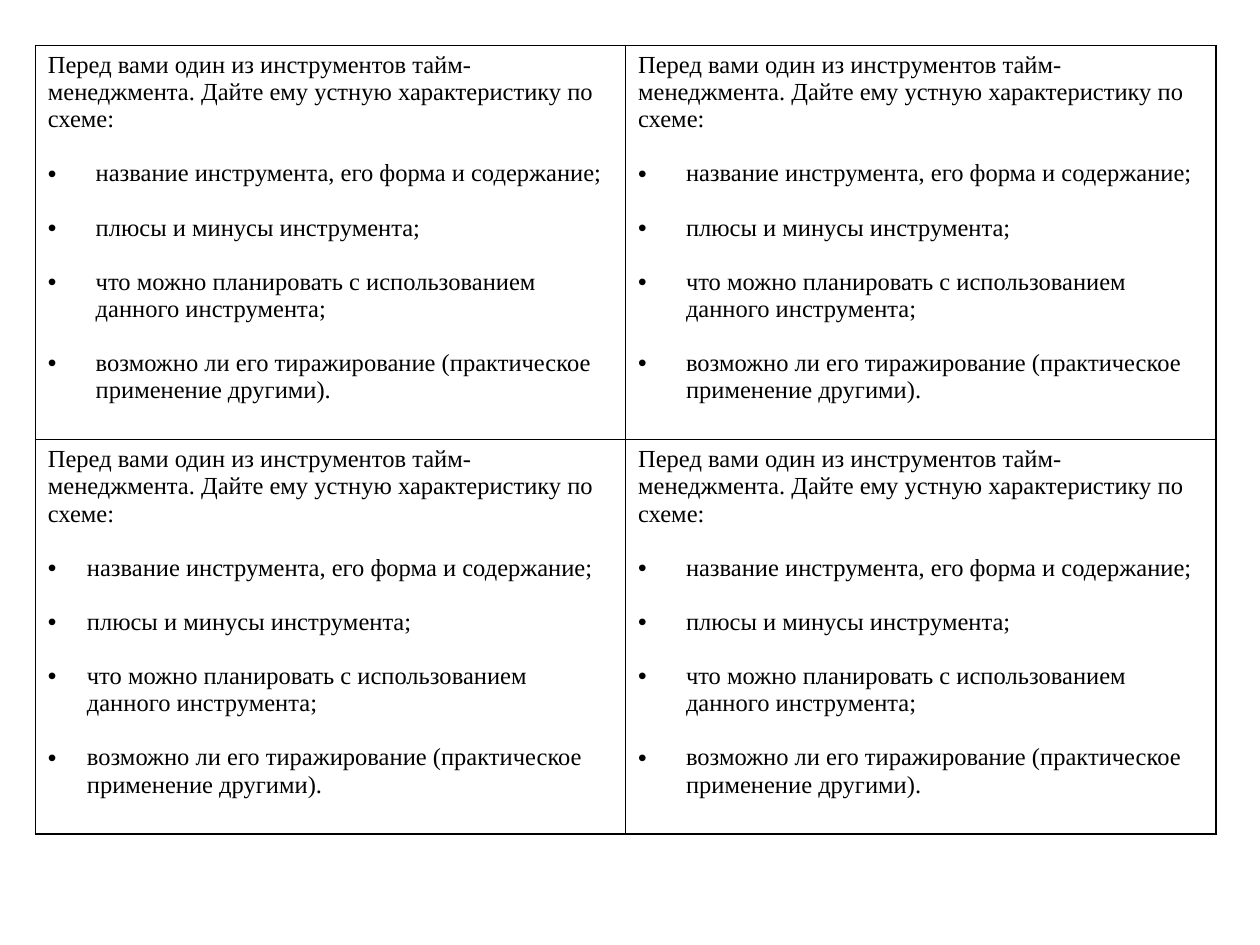
import pptx
import pptx.util
import pptx.dml.color
import pptx.oxml.ns
import lxml.etree

Inches = pptx.util.Inches
Pt = pptx.util.Pt
BLACK = pptx.dml.color.RGBColor(0, 0, 0)
WHITE = pptx.dml.color.RGBColor(255, 255, 255)
FONT = "Times New Roman"

TASK = ("Перед вами один из инструментов тайм-менеджмента. "
        "Дайте ему устную характеристику по схеме:")
POINTS = [
    "название инструмента, его форма и содержание;",
    "плюсы и минусы инструмента;",
    "что можно планировать с использованием данного инструмента;",
    "возможно ли его тиражирование (практическое применение другими).",
]
INDENTS = [[0.38, 0.38], [0.31, 0.38]]


def add_node(parent, tag, **attrs):
    node = lxml.etree.SubElement(parent, pptx.oxml.ns.qn(tag))
    for name, value in attrs.items():
        node.set(name, str(value))
    return node


deck = pptx.Presentation()
deck.slide_width = Inches(10)
deck.slide_height = Inches(7.5)
slide = deck.slides.add_slide(deck.slide_layouts[6])

cards = slide.shapes.add_table(
    2, 2, Inches(0.28), Inches(0.36), Inches(9.37), Inches(6.26)).table
cards.first_row = False
cards.horz_banding = False

for row, indents in enumerate(INDENTS):
    for col, indent in enumerate(indents):
        cell = cards.cell(row, col)

        props = cell._tc.get_or_add_tcPr()
        for side in ("a:lnL", "a:lnR", "a:lnT", "a:lnB"):
            line = add_node(props, side, w=Pt(1))
            paint = add_node(line, "a:solidFill")
            add_node(paint, "a:srgbClr", val=BLACK)
        cell.fill.solid()
        cell.fill.fore_color.rgb = WHITE

        frame = cell.text_frame
        frame.text = "\n".join([TASK] + POINTS)
        for par in frame.paragraphs[1:]:
            par.space_before = Pt(15.5)
            style = par._p.get_or_add_pPr()
            style.set("marL", str(Inches(indent)))
            style.set("indent", str(-Inches(indent)))
            add_node(style, "a:buFont", typeface="Arial")
            add_node(style, "a:buChar", char="•")
        for par in frame.paragraphs:
            for run in par.runs:
                run.font.name = FONT
                run.font.size = Pt(14)
                run.font.color.rgb = BLACK

deck.save("out.pptx")
